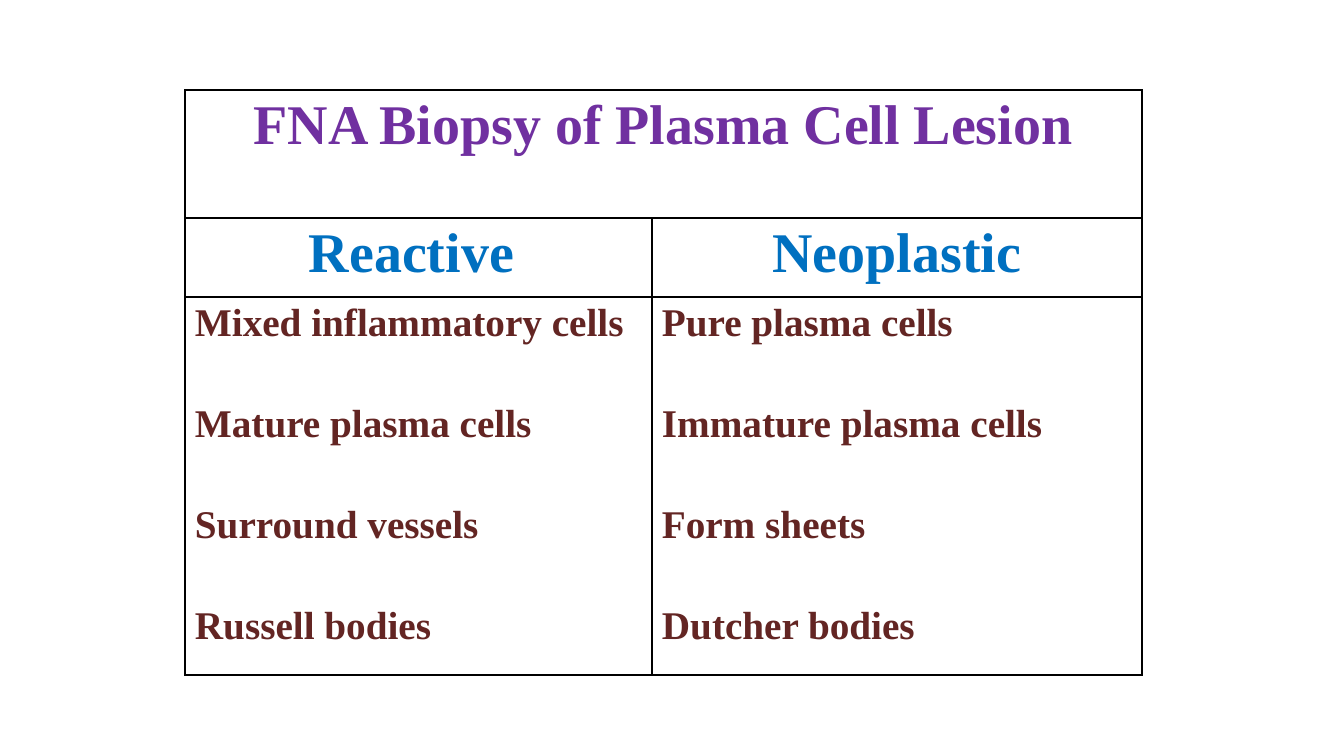
from lxml import etree
from pptx import Presentation
from pptx import util as u
from pptx.dml.color import RGBColor
from pptx.enum import text
from pptx.oxml import ns

PX = 914400 / 134.4
PURPLE = RGBColor(0x70, 0x30, 0xA0)
BLUE = RGBColor(0x00, 0x70, 0xC0)
BROWN = RGBColor(0x63, 0x25, 0x23)
WHITE = RGBColor(0xFF, 0xFF, 0xFF)
BLACK = RGBColor(0x00, 0x00, 0x00)

COLUMN_WIDTHS = [467, 490]
ROW_HEIGHTS = [128, 79, 378]
ROW_STYLES = [
    (30, PURPLE, text.PP_ALIGN.CENTER),
    (30, BLUE, text.PP_ALIGN.CENTER),
    (21, BROWN, text.PP_ALIGN.LEFT),
]
ROWS = [
    [["FNA Biopsy of Plasma Cell Lesion"], []],
    [["Reactive "], ["Neoplastic"]],
    [
        ["Mixed inflammatory cells", "Mature plasma cells", "Surround vessels", "Russell bodies"],
        ["Pure plasma cells", "Immature plasma cells", "Form sheets", "Dutcher bodies"],
    ],
]


def px(length):
    return u.Emu(round(length * PX))


def add_borders(cell):
    properties = cell._tc.get_or_add_tcPr()
    for index, side in enumerate(["lnL", "lnR", "lnT", "lnB"]):
        line = etree.Element(ns.qn(f"a:{side}"), w=str(u.Pt(1)))
        fill = etree.SubElement(line, ns.qn("a:solidFill"))
        etree.SubElement(fill, ns.qn("a:srgbClr"), val=str(BLACK))
        properties.insert(index, line)


presentation = Presentation()
presentation.slide_width = px(1344)
presentation.slide_height = px(756)
slide = presentation.slides.add_slide(presentation.slide_layouts[6])

table = slide.shapes.add_table(
    len(ROW_HEIGHTS), len(COLUMN_WIDTHS),
    px(185), px(90), px(sum(COLUMN_WIDTHS)), px(sum(ROW_HEIGHTS)),
).table
table.first_row = False
table.horz_banding = False
for column, width in zip(table.columns, COLUMN_WIDTHS):
    column.width = px(width)
for row, height in zip(table.rows, ROW_HEIGHTS):
    row.height = px(height)
table.cell(0, 0).merge(table.cell(0, 1))

for row, contents, (size, color, alignment) in zip(table.rows, ROWS, ROW_STYLES):
    for cell, lines in zip(row.cells, contents):
        cell.fill.solid()
        cell.fill.fore_color.rgb = WHITE
        add_borders(cell)
        cell.margin_left = cell.margin_right = px(10)
        cell.margin_top = cell.margin_bottom = px(5)
        if not lines:
            continue
        cell.text = "\n".join(lines)
        for index, paragraph in enumerate(cell.text_frame.paragraphs):
            paragraph.alignment = alignment
            paragraph.space_before = u.Pt(30.8 if index else 0)
            paragraph.font.name = "Times New Roman"
            paragraph.font.size = u.Pt(size)
            paragraph.font.bold = True
            paragraph.font.color.rgb = color

presentation.save("out.pptx")
